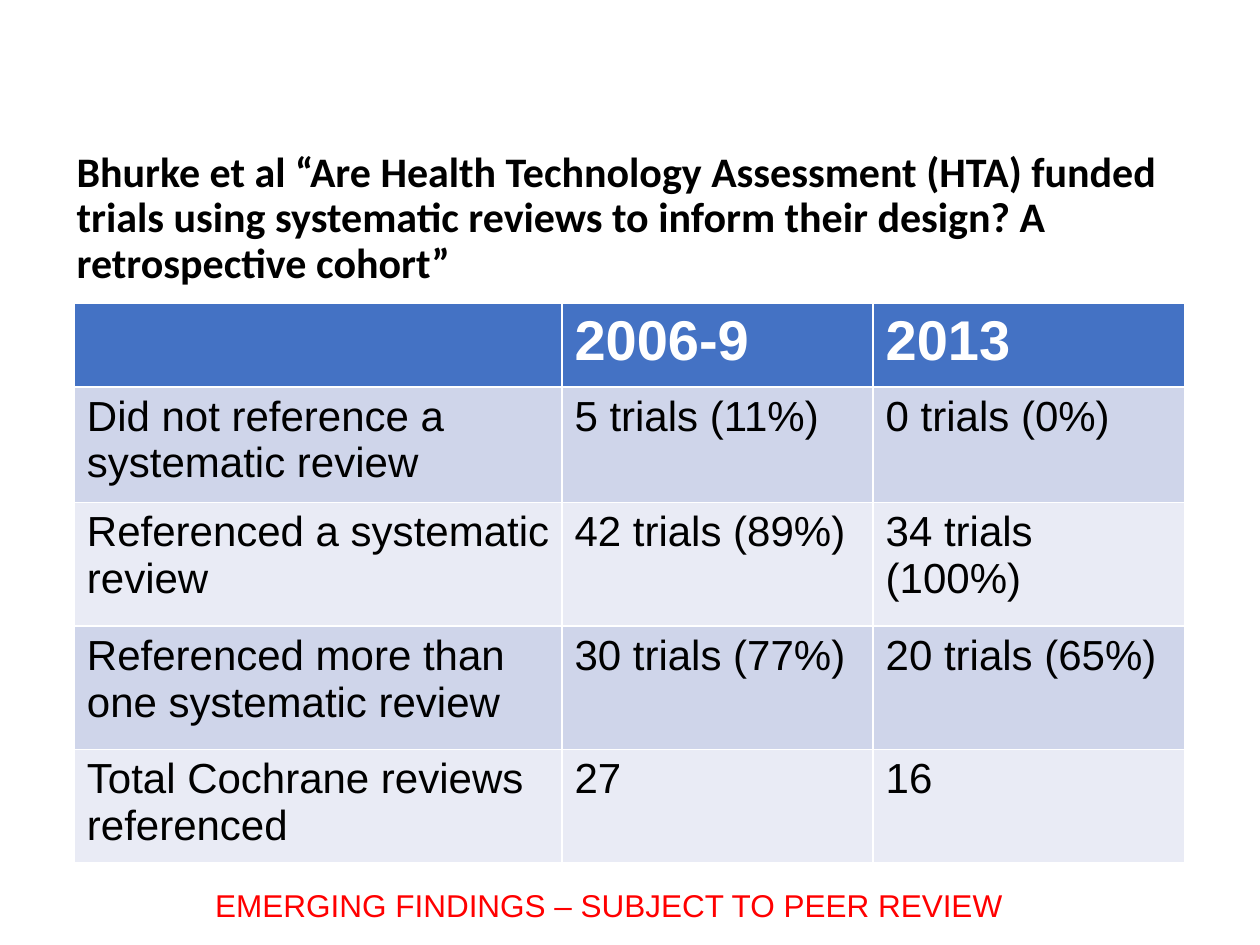
from pptx import Presentation
from pptx import util as u
from pptx.dml.color import RGBColor

BLACK = RGBColor(0x00, 0x00, 0x00)
WHITE = RGBColor(0xFF, 0xFF, 0xFF)
RED = RGBColor(0xFF, 0x00, 0x00)
HEADER_BLUE = RGBColor(0x44, 0x72, 0xC4)
BANDS = (RGBColor(0xCF, 0xD5, 0xEA), RGBColor(0xE9, 0xEB, 0xF5))

TITLE = (
    "Bhurke et al “Are Health Technology Assessment (HTA) funded trials "
    "using systematic reviews to inform their design? A retrospective cohort”"
)
FOOTNOTE = "EMERGING FINDINGS – SUBJECT TO PEER REVIEW"
COLUMN_WIDTHS = (3.87, 2.47, 2.47)
ROW_HEIGHTS = (0.66, 0.92, 0.98, 0.98, 0.88)
FINDINGS = (
    ("", "2006-9", "2013"),
    ("Did not reference a systematic review", "5 trials (11%)", "0 trials (0%)"),
    ("Referenced a systematic review", "42 trials (89%)", "34 trials (100%)"),
    ("Referenced more than one systematic review", "30 trials (77%)", "20 trials (65%)"),
    ("Total Cochrane reviews referenced", "27", "16"),
)


def write_text(frame, content, size=24, font="Arial", color=BLACK, bold=False, spacing=None):
    paragraph = frame.paragraphs[0]
    paragraph.line_spacing = spacing
    paragraph.font.size = u.Pt(size)
    if not content:
        return
    run = paragraph.add_run()
    run.text = content
    run.font.name = font
    run.font.size = u.Pt(size)
    run.font.bold = bold
    run.font.color.rgb = color


def add_text(slide, bounds, content, wrap=True, **text_format):
    shape = slide.shapes.add_textbox(*map(u.Inches, bounds))
    shape.text_frame.word_wrap = wrap
    write_text(shape.text_frame, content, **text_format)


def add_findings_table(slide, left, top):
    bounds = (left, top, sum(COLUMN_WIDTHS), sum(ROW_HEIGHTS))
    table = slide.shapes.add_table(
        len(ROW_HEIGHTS), len(COLUMN_WIDTHS), *map(u.Inches, bounds)
    ).table
    for column, width in zip(table.columns, COLUMN_WIDTHS):
        column.width = u.Inches(width)
    for index, (row, height, values) in enumerate(zip(table.rows, ROW_HEIGHTS, FINDINGS)):
        row.height = u.Inches(height)
        is_header = index == 0
        fill = HEADER_BLUE if is_header else BANDS[(index - 1) % 2]
        text_format = dict(size=32, color=WHITE, bold=True) if is_header else {}
        for cell, value in zip(row.cells, values):
            cell.fill.solid()
            cell.fill.fore_color.rgb = fill
            write_text(cell.text_frame, value, **text_format)


def main():
    presentation = Presentation()
    presentation.slide_width = u.Inches(10)
    presentation.slide_height = u.Inches(7.5)
    slide = presentation.slides.add_slide(presentation.slide_layouts[6])
    add_text(slide, (0.51, 1.15, 9.13, 1.18), TITLE, font="Calibri", bold=True, spacing=0.9)
    add_findings_table(slide, 0.59, 2.41)
    add_text(slide, (1.61, 6.98, 6.51, 0.4), FOOTNOTE, wrap=False, size=18, color=RED)
    presentation.save("out.pptx")


if __name__ == "__main__":
    main()
